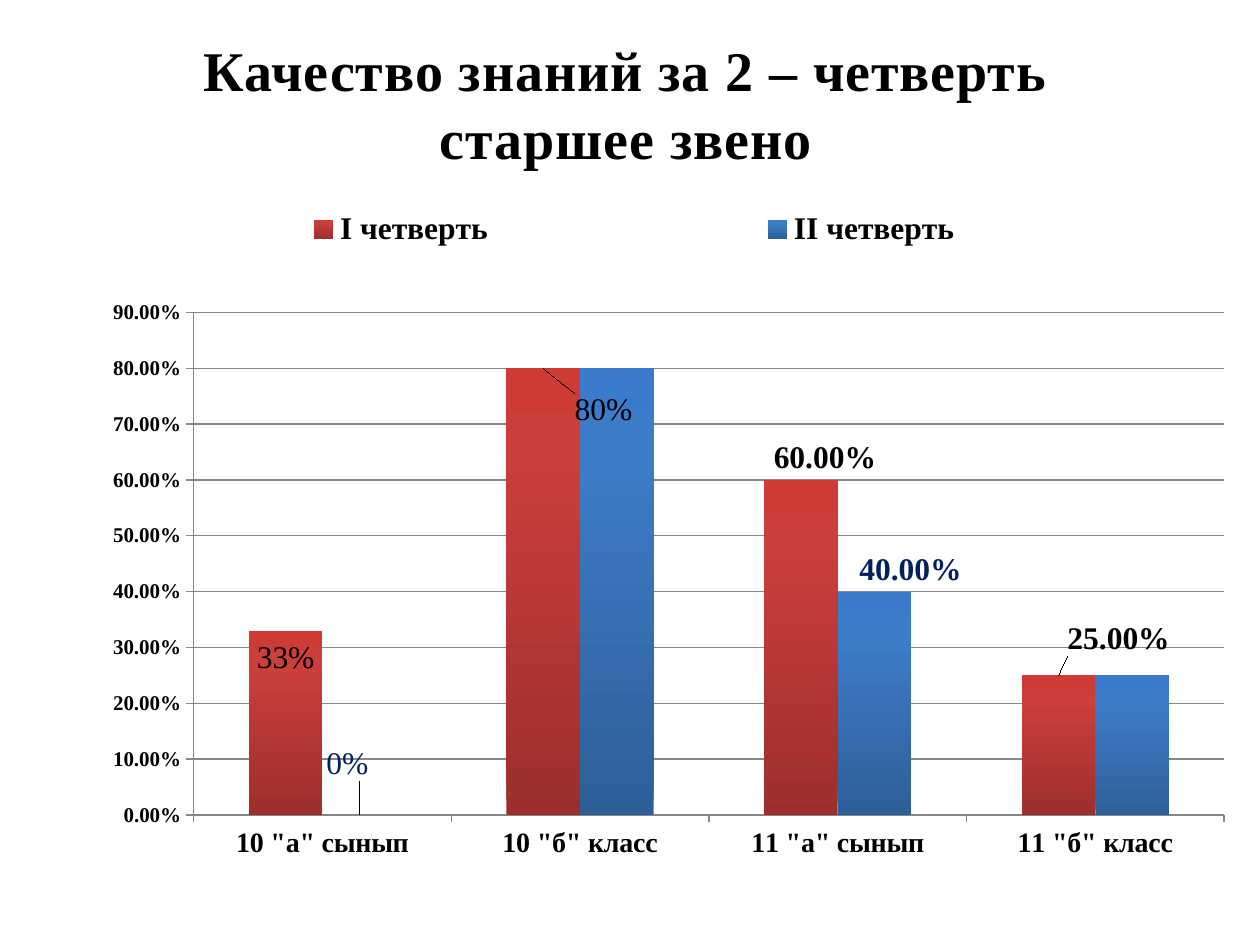
from copy import deepcopy

from lxml import etree
from pptx import Presentation
from pptx import util as u
from pptx.chart.data import CategoryChartData
from pptx.dml.color import RGBColor
from pptx.enum import chart as charts, text
from pptx.oxml import ns

SERIF = "Times New Roman"


def style_font(font, size, color="000000", bold=True, name=SERIF):
    font.name, font.size, font.bold = name, u.Pt(size), bold
    font.color.rgb = RGBColor.from_string(color)


def write_text(frame, content, spacing=None, **style):
    """Fill the frame with one paragraph; a vertical tab breaks the line."""
    frame.text = content
    for run in frame.paragraphs[0].runs:
        style_font(run.font, **style)
        if spacing:
            run.font._element.set("spc", str(spacing))


presentation = Presentation()
presentation.slide_width, presentation.slide_height = u.Cm(25.4), u.Cm(19.05)
slide = presentation.slides.add_slide(presentation.slide_layouts[5])

title = slide.shapes.title
title.left, title.top = u.Cm(0.58), u.Cm(0.58)
title.width, title.height = u.Cm(24.08), u.Cm(3)
title.text_frame.auto_size = text.MSO_AUTO_SIZE.NONE
title.text_frame.vertical_anchor = text.MSO_ANCHOR.MIDDLE
write_text(title.text_frame, "Качество знаний за 2 – четверть\vстаршее звено",
           spacing=50, size=32)
title.text_frame.paragraphs[0].alignment = text.PP_ALIGN.CENTER

# Labels per point: (own text or None for the value, shift x, shift y);
# None in place of the whole entry hides the label.
quarters = [
    ("I четверть", (0.33, 0.8, 0.6, 0.25), "000000",
     ("9C2F2D", "CB3E3A", "CE3B37"),
     [("33%", 0, 0.07), ("80%", 0.05, 0.09), (None, 0.02, 0), (None, 0.05, -0.02)]),
    ("II четверть", (0, 0.8, 0.4, 0.25), "002060",
     ("2F5F99", "3D7CC7", "3A7CCB"),
     [("0%", -0.01, -0.04), None, (None, 0.03, 0), None]),
]
data = CategoryChartData(number_format="0.00%")
data.categories = ['10 "а" сынып', '10 "б" класс', '11 "а" сынып', '11 "б" класс']
for name, values, *_ in quarters:
    data.add_series(name, values)
chart = slide.shapes.add_chart(
    charts.XL_CHART_TYPE.COLUMN_CLUSTERED,
    u.Cm(0.41), u.Cm(3.76), u.Cm(24.28), u.Cm(14.35), data).chart
chart.has_title = False
style_font(chart.font, 18, bold=False, name="Calibri")
chart.has_legend = True
chart.legend.position = charts.XL_LEGEND_POSITION.RIGHT
chart.legend.include_in_layout = False
style_font(chart.legend.font, 18)

plot = chart.plots[0]
plot.gap_width, plot.overlap, plot.vary_by_categories = 150, 0, False
value_axis, category_axis = chart.value_axis, chart.category_axis
value_axis.minimum_scale, value_axis.maximum_scale = 0, 0.9
value_axis.major_unit = 0.1
value_axis.tick_labels.number_format = "0.00%"
value_axis.tick_labels.number_format_is_linked = False
for axis, size in ((value_axis, 12), (category_axis, 16)):
    style_font(axis.tick_labels.font, size)
    axis.major_tick_mark = charts.XL_TICK_MARK.OUTSIDE
for line in (value_axis.format.line, category_axis.format.line,
             value_axis.major_gridlines.format.line):
    line.color.rgb = RGBColor.from_string("878787")
    line.width = u.Pt(0.75)

layouts = [
    (chart._chartSpace.xpath("c:chart/c:plotArea")[0], 0,
     dict(layoutTarget="inner", xMode="edge", yMode="edge",
          x=0.144, y=0.177, w=0.856, h=0.706)),
    (chart.legend._element, 1,
     dict(xMode="edge", yMode="edge", x=0.02, y=0.01, w=0.98, h=0.1)),
]
for series, (_, _, color, shades, labels) in zip(plot.series, quarters):
    fill = series.format.fill
    fill.gradient()
    fill.gradient_angle = 90
    stop_list = series._element.xpath(".//a:gsLst")[0]
    stop_list.append(deepcopy(stop_list[0]))
    for stop, position, shade in zip(fill.gradient_stops, (0, 0.8, 1), shades):
        stop.position = position
        stop.color.rgb = RGBColor.from_string(shade)

    series.data_labels.show_value = True
    series.data_labels.number_format = "0.00%"
    series.data_labels.number_format_is_linked = False
    style_font(series.data_labels.font, 18, color)
    for index, entry in enumerate(labels):
        label = series.points[index].data_label
        style_font(label.font, 18, color)
        node = series._element.xpath(f"c:dLbls/c:dLbl[c:idx/@val='{index}']")[0]
        if entry is None:
            for child in node[1:]:
                node.remove(child)
            etree.SubElement(node, ns.qn("c:delete")).set("val", "1")
            continue
        caption, x, y = entry
        if caption:
            write_text(label.text_frame, caption, size=18, color=color, bold=False)
        label.position = charts.XL_LABEL_POSITION.OUTSIDE_END
        layouts.append((node, 1, dict(x=x, y=y)))

for parent, place, settings in layouts:
    for old in parent.findall(ns.qn("c:layout")):
        parent.remove(old)
    layout = etree.Element(ns.qn("c:layout"))
    manual = etree.SubElement(layout, ns.qn("c:manualLayout"))
    for key, value in settings.items():
        etree.SubElement(manual, ns.qn(f"c:{key}")).set("val", str(value))
    parent.insert(place, layout)

presentation.save("out.pptx")
